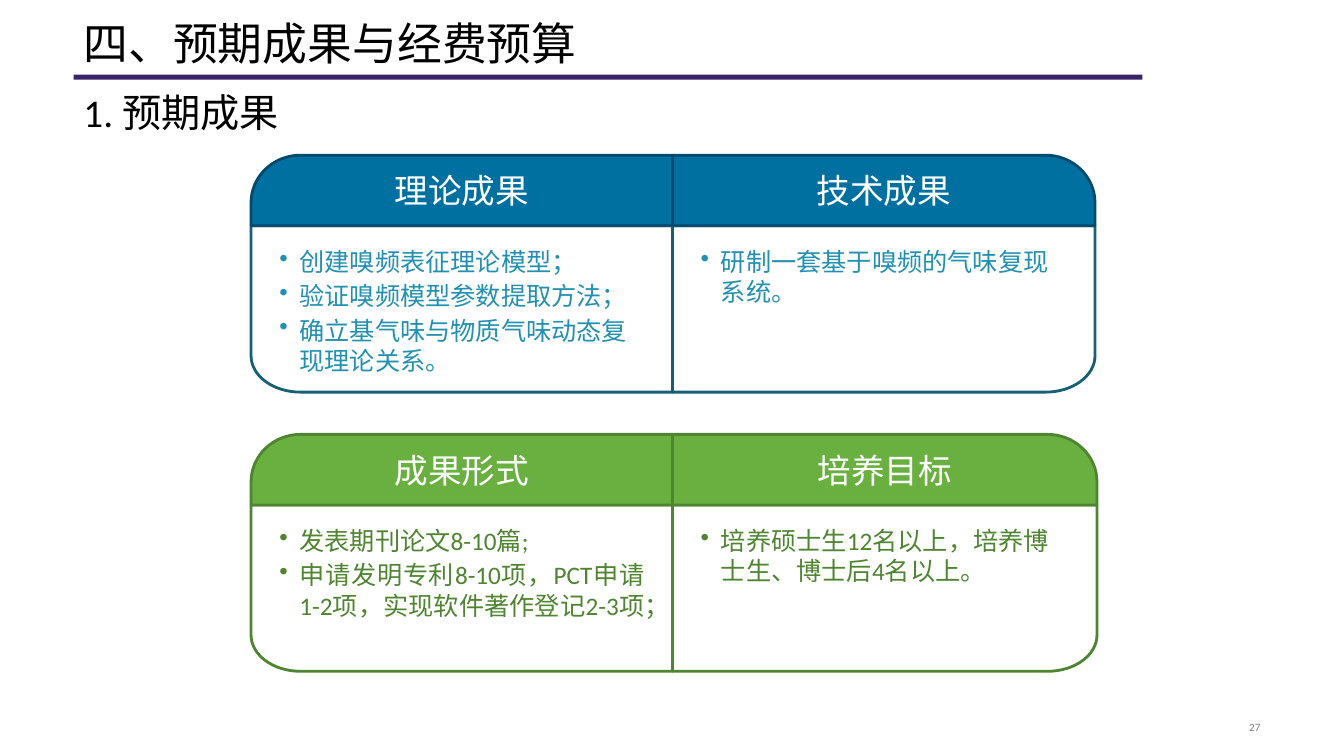
from math import cos, pi, sin

from lxml.etree import SubElement
from pptx import Presentation
from pptx.dml.color import RGBColor
from pptx.enum.shapes import MSO_SHAPE as Shape
from pptx.enum.text import MSO_ANCHOR as Anchor, PP_ALIGN as Align
from pptx.oxml.ns import qn
from pptx.util import Pt

PX = 9144  # EMU per px, 100 px to the inch
FONT = "Calibri"

# Content: (left, top, width, height), text, anchor, format values
LABELS = [
    ((73, 0, 1187, 75), "四、预期成果与经费预算", Anchor.BOTTOM,
     dict(size=32, color="000000", line_spacing=0.9)),
    ((942, 710, 318, 23), "27", Anchor.MIDDLE,
     dict(size=8, color="808080", alignment=Align.RIGHT)),
    ((73, 86, 1187, 55), "1. 预期成果", Anchor.MIDDLE,
     dict(size=28, color="000000", line_spacing=0.9)),
]
RULE = (73, 74, 1060, 5)
RULE_COLOR = "362569"

PANELS = [
    dict(top=154, right=1086, fill="0070A0", head_line="004B6B",
         body_line="176074", ink="2290AE",
         columns=[
             ("理论成果", Align.LEFT,
              ["创建嗅频表征理论模型；", "验证嗅频模型参数提取方法；",
               "确立基气味与物质气味动态复现理论关系。"]),
             ("技术成果", Align.LEFT, ["研制一套基于嗅频的气味复现系统。"]),
         ]),
    dict(top=431, right=1088, fill="6AB041", head_line="4F8431",
         body_line="4F8431", ink="4F8431",
         columns=[
             ("成果形式", Align.JUSTIFY,
              ["发表期刊论文8-10篇;",
               "申请发明专利8-10项，PCT申请1-2项，实现软件著作登记2-3项；"]),
             ("培养目标", Align.LEFT,
              ["培养硕士生12名以上，培养博士生、博士后4名以上。"]),
         ]),
]
PANEL_LEFT, SEAM = 249, 667
HEAD_HEIGHT, BODY_HEIGHT = 70, 165
HEAD_CORNER, BODY_CORNER = (49, 47), (49, 36)
BODY_INSETS = (28, 20, 28, 5)
HANG = 20
ARC_STEPS = 16


def rgb(value):
    return RGBColor.from_string(value)


def emu(*lengths):
    return [round(length * PX) for length in lengths]


def write(shape, lines, anchor, size, color, bullet=False, insets=(10, 5, 10, 5),
          **formats):
    frame = shape.text_frame
    frame.word_wrap = True
    frame.vertical_anchor = anchor
    for side, inset in zip(("left", "top", "right", "bottom"), emu(*insets)):
        setattr(frame, f"margin_{side}", inset)
    for index, line in enumerate(lines):
        para = frame.paragraphs[0] if index == 0 else frame.add_paragraph()
        if bullet:
            props = para._p.get_or_add_pPr()
            props.set("marL", str(HANG * PX))
            props.set("indent", str(-HANG * PX))
            SubElement(props, qn("a:buChar")).set("char", "•")
            if index:
                para.space_before = Pt(3)
        for name, value in {"alignment": Align.LEFT, **formats}.items():
            setattr(para, name, value)
        span = para.add_run()
        span.text = line
        for name, value in dict(name=FONT, size=Pt(size)).items():
            setattr(span.font, name, value)
        span.font.color.rgb = rgb(color)


def add_cell(page, inner, outer, flat, curved, corner, fill, line):
    """Box with one elliptical corner, where the outer and curved edges meet."""
    toward_x = 1 if inner > outer else -1
    toward_y = 1 if flat > curved else -1
    radius_x, radius_y = corner[0] * toward_x, corner[1] * toward_y
    turns = [step * pi / 2 / ARC_STEPS for step in range(ARC_STEPS + 1)]
    arc = [(outer + radius_x * (1 - sin(turn)), curved + radius_y * (1 - cos(turn)))
           for turn in turns]
    points = [emu(*point) for point in [(inner, curved), *arc, (outer, flat)]]
    builder = page.shapes.build_freeform(*emu(inner, flat), scale=1.0)
    builder.add_line_segments(points, close=True)
    cell = builder.convert_to_shape()
    cell.shadow.inherit = False
    cell.fill.solid()
    cell.fill.fore_color.rgb = rgb(fill)
    cell.line.color.rgb = rgb(line)
    cell.line.width = Pt(2)
    return cell


def add_panel(page, panel):
    top = panel["top"]
    middle = top + HEAD_HEIGHT
    bottom = middle + BODY_HEIGHT
    for outer, column in zip((PANEL_LEFT, panel["right"]), panel["columns"]):
        heading, alignment, items = column
        body = add_cell(page, SEAM, outer, middle, bottom, BODY_CORNER,
                        "FFFFFF", panel["body_line"])
        write(body, items, Anchor.TOP, 18, panel["ink"], bullet=True,
              insets=BODY_INSETS, alignment=alignment)
        head = add_cell(page, SEAM, outer, middle, top, HEAD_CORNER,
                        panel["fill"], panel["head_line"])
        write(head, [heading], Anchor.MIDDLE, 24, "FFFFFF", alignment=Align.CENTER)


def main():
    deck = Presentation()
    deck.slide_width, deck.slide_height = emu(1333, 750)
    page = deck.slides.add_slide(deck.slide_layouts[6])

    # Rule under the title
    rule = page.shapes.add_shape(Shape.RECTANGLE, *emu(*RULE))
    rule.shadow.inherit = False
    rule.fill.solid()
    rule.fill.fore_color.rgb = rgb(RULE_COLOR)
    rule.line.fill.background()

    # Title, page number and subtitle
    for place, text, anchor, formats in LABELS:
        box = page.shapes.add_textbox(*emu(*place))
        write(box, [text], anchor, **formats)

    # Two-column result panels
    for panel in PANELS:
        add_panel(page, panel)

    deck.save("out.pptx")


if __name__ == "__main__":
    main()
